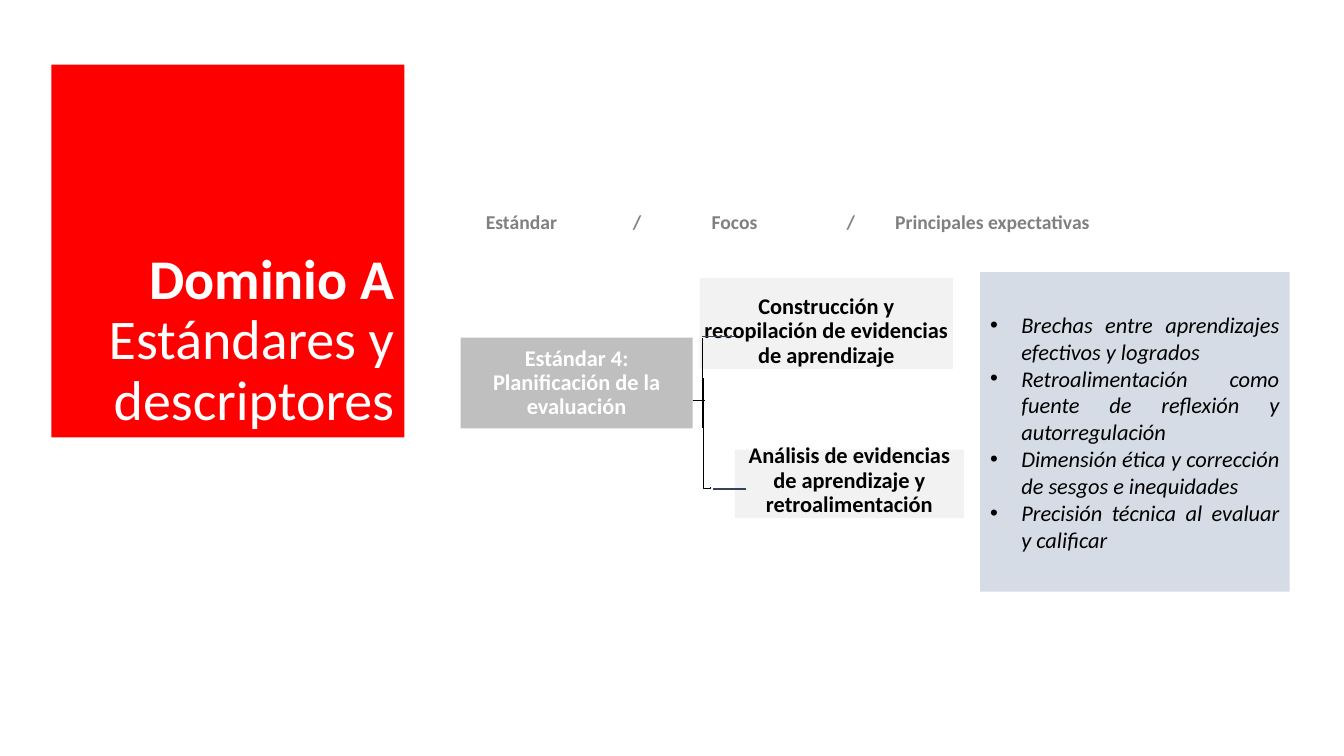
"""Build the slide on Dominio A: standard, focuses and main expectations."""
from lxml import etree
from pptx import Presentation
from pptx.dml.color import RGBColor
from pptx.enum.shapes import MSO_CONNECTOR, MSO_SHAPE
from pptx.enum.text import MSO_ANCHOR, MSO_AUTO_SIZE, PP_ALIGN
from pptx.oxml.ns import qn
from pptx.util import Inches, Pt

RED = RGBColor(0xFF, 0x00, 0x00)
WHITE = RGBColor(0xFF, 0xFF, 0xFF)
BLACK = RGBColor(0x00, 0x00, 0x00)
NAVY = RGBColor(0x36, 0x43, 0x55)
GRAY = RGBColor(0x80, 0x80, 0x80)
MID_GRAY = RGBColor(0xBF, 0xBF, 0xBF)
LIGHT_GRAY = RGBColor(0xF2, 0xF2, 0xF2)
PALE_BLUE = RGBColor(0xD6, 0xDC, 0xE5)
STRAIGHT, ELBOW = MSO_CONNECTOR.STRAIGHT, MSO_CONNECTOR.ELBOW
RECTANGLE = MSO_SHAPE.RECTANGLE
BOTTOM, MIDDLE = MSO_ANCHOR.BOTTOM, MSO_ANCHOR.MIDDLE
CENTER, RIGHT, JUSTIFY = PP_ALIGN.CENTER, PP_ALIGN.RIGHT, PP_ALIGN.JUSTIFY
NO_AUTOFIT = MSO_AUTO_SIZE.NONE


def place(shape, left, top, width, height, fill):
    shape.left, shape.top = Inches(left), Inches(top)
    shape.width, shape.height = Inches(width), Inches(height)
    shape.fill.solid()
    shape.fill.fore_color.rgb = fill
    shape.text_frame.word_wrap = True
    shape.text_frame.auto_size = NO_AUTOFIT


def style(paragraph, size, color, bold=None, italic=None):
    font = paragraph.font
    font.name, font.size = "Calibri", Pt(size)
    font.bold, font.italic = bold, italic
    font.color.rgb = color


presentation = Presentation()
presentation.slide_width = Inches(13.33)
presentation.slide_height = Inches(7.5)
slide = presentation.slides.add_slide(presentation.slide_layouts[1])

title = slide.shapes.title
place(title, 0.51, 0.64, 3.5, 3.7, RED)
title.text_frame.vertical_anchor = BOTTOM
paragraph = title.text_frame.paragraphs[0]
paragraph.text = "Dominio A\vEstándares y descriptores"
paragraph.alignment = RIGHT
paragraph.line_spacing = 0.9
style(paragraph, 40, WHITE)
paragraph.runs[0].font.bold = True

boxes = [
    ("Estándar 4: Planificación de la evaluación",
     (4.57, 3.35, 2.3, 0.9), MID_GRAY, WHITE, MIDDLE, 0.15),
    ("Construcción y recopilación de evidencias de aprendizaje",
     (6.94, 2.76, 2.51, 0.9), LIGHT_GRAY, BLACK, BOTTOM, 0.01),
    ("Análisis de evidencias de aprendizaje y retroalimentación",
     (7.29, 4.46, 2.27, 0.68), LIGHT_GRAY, BLACK, BOTTOM, 0.08),
]
for text, bounds, fill, color, anchor, side_margin in boxes:
    box = slide.shapes.add_shape(RECTANGLE, 0, 0, 0, 0)
    place(box, *bounds, fill)
    box.line.fill.background()
    box.shadow.inherit = False
    frame = box.text_frame
    frame.vertical_anchor = anchor
    frame.margin_left = frame.margin_right = Inches(side_margin)
    frame.margin_top = frame.margin_bottom = Inches(0.01)
    paragraph = frame.paragraphs[0]
    paragraph.text = text
    paragraph.alignment = CENTER
    paragraph.line_spacing = 0.9
    style(paragraph, 16, color, bold=True)

connectors = [
    (STRAIGHT, (6.96, 3.34, 7.29, 3.34), NAVY, 1),
    (STRAIGHT, (6.97, 4.25, 6.97, 3.35), BLACK, 0.5),
    (STRAIGHT, (6.87, 3.97, 6.99, 3.97), BLACK, 0.5),
    (STRAIGHT, (7.07, 4.85, 7.4, 4.85), NAVY, 1),
    (ELBOW, (6.47, 4.33, 7.55, 4.26), BLACK, 0.5),
]
for kind, ends, color, width in connectors:
    connector = slide.shapes.add_connector(kind, *map(Inches, ends))
    connector.line.color.rgb = color
    connector.line.width = Pt(width)
    properties = connector._element.spPr
    etree.SubElement(properties, qn("a:effectLst"))
    if kind == ELBOW:
        properties.find(qn("a:xfrm")).set("rot", "16200000")
        geometry = properties.find(qn("a:prstGeom"))
        adjustments = geometry.find(qn("a:avLst"))
        if adjustments is None:
            adjustments = etree.SubElement(geometry, qn("a:avLst"))
        etree.SubElement(adjustments, qn("a:gd"), name="adj1", fmla="val -900")

expectations = [
    "Brechas entre aprendizajes efectivos y logrados",
    "Retroalimentación como fuente de reflexión y autorregulación",
    "Dimensión ética y corrección de sesgos e inequidades",
    "Precisión técnica al evaluar y calificar",
]
body = slide.placeholders[1]
place(body, 9.72, 2.7, 3.07, 3.17, PALE_BLUE)
body.text_frame.vertical_anchor = MIDDLE
body.text_frame.text = "\n".join(expectations)
for paragraph in body.text_frame.paragraphs:
    paragraph.alignment = JUSTIFY
    paragraph.space_before = Pt(0)
    style(paragraph, 16, BLACK, italic=True)
    paragraph_properties = paragraph._p.get_or_add_pPr()
    paragraph_properties.set("marL", str(Inches(0.31)))
    paragraph_properties.set("indent", str(Inches(-0.31)))

header = slide.shapes.add_textbox(Inches(4.72), Inches(2.03), Inches(8), Inches(0.34))
header.text_frame.word_wrap = True
paragraph = header.text_frame.paragraphs[0]
paragraph.text = "Estándar\t/\tFocos\t/\tPrincipales expectativas"
tab_list = etree.Element(qn("a:tabLst"))
for position in (1.46, 2.24, 3.58, 4.06):
    etree.SubElement(tab_list, qn("a:tab"), pos=str(Inches(position)), algn="l")
paragraph._p.get_or_add_pPr().append(tab_list)
style(paragraph, 14, GRAY, bold=True)

presentation.save("out.pptx")
